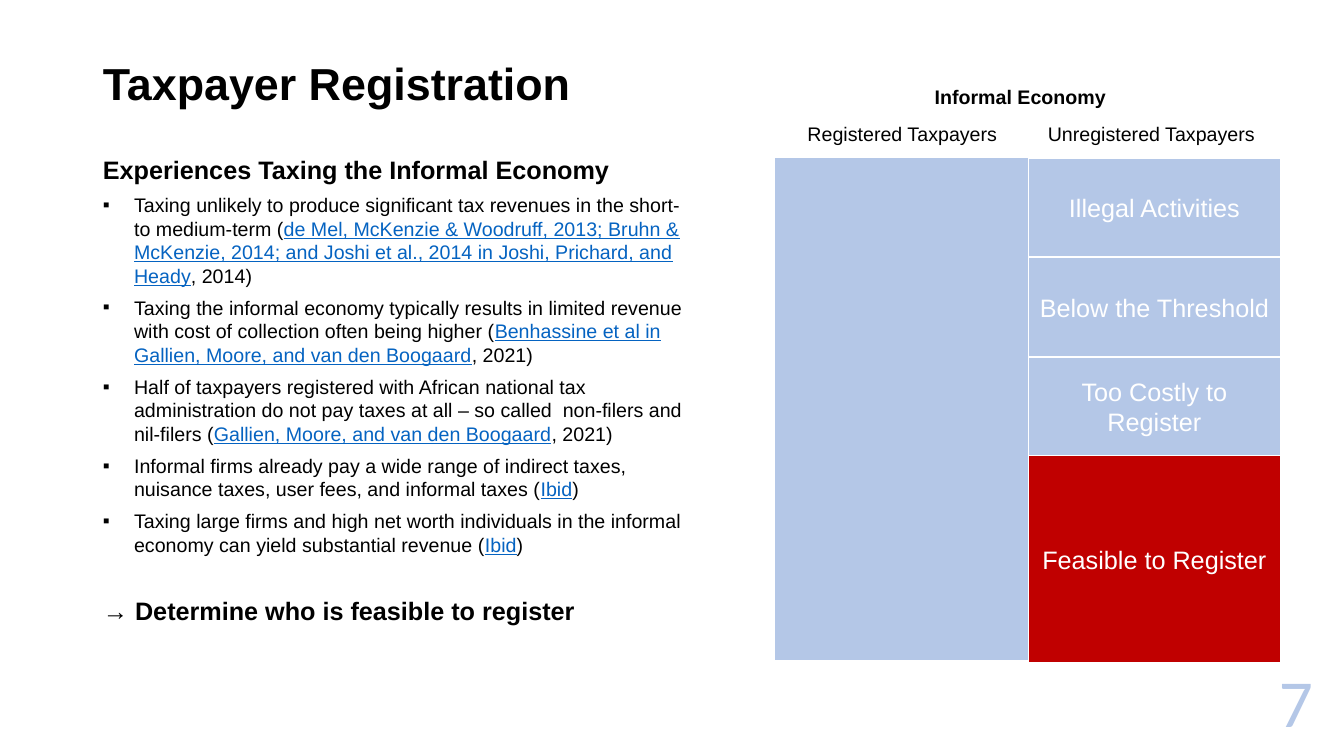
"""Build the Taxpayer Registration slide."""
from dataclasses import dataclass

from lxml import etree
from pptx import Presentation
from pptx.dml.color import RGBColor
from pptx.enum import shapes, text
from pptx.oxml import ns
from pptx.util import Inches, Pt


@dataclass(frozen=True)
class Theme:
    """Fonts, colours and type sizes."""
    font: str = "Arial"
    number_font: str = "Calibri"
    ink: str = "000000"
    white: str = "FFFFFF"
    link: str = "0563C1"
    blue: str = "B4C7E7"
    red: str = "C00000"
    title: int = 32
    heading: int = 18
    body: int = 14
    number: int = 48


THEME = Theme()
TITLE = "Taxpayer Registration"
HEADING = "Experiences Taxing the Informal Economy"
CONCLUSION = "→ Determine who is feasible to register"
BULLETS = [
    ("Taxing unlikely to produce significant tax revenues in the short- to medium-term (",
     "de Mel, McKenzie & Woodruff, 2013; Bruhn & McKenzie, 2014; and Joshi et al., 2014 "
     "in Joshi, Prichard, and Heady", ", 2014)"),
    ("Taxing the informal economy typically results in limited revenue with cost of "
     "collection often being higher (",
     "Benhassine et al in Gallien, Moore, and van den Boogaard", ", 2021)"),
    ("Half of taxpayers registered with African national tax administration do not pay "
     "taxes at all – so called  non-filers and nil-filers (",
     "Gallien, Moore, and van den Boogaard", ", 2021)"),
    ("Informal firms already pay a wide range of indirect taxes, nuisance taxes, user fees, "
     "and informal taxes (", "Ibid", ")"),
    ("Taxing large firms and high net worth individuals in the informal economy can yield "
     "substantial revenue (", "Ibid", ")"),
]
LABELS = [
    ("Informal Economy", 8.87, 0.79, True),
    ("Registered Taxpayers", 7.7, 1.16, False),
    ("Unregistered Taxpayers", 10.17, 1.16, False),
]
SEGMENTS = [
    ("Illegal Activities", 0.98, THEME.blue),
    ("Below the Threshold", 0.99, THEME.blue),
    ("Too Costly to Register", 0.98, THEME.blue),
    ("Feasible to Register", 2.05, THEME.red),
]
PAGE_NUMBER = "7"
COLUMN_LEFT, COLUMN_TOP, COLUMN_WIDTH = 10.2, 1.57, 2.5
REGISTERED = (7.68, 1.56, 2.52, 5)
INDENT = 0.31


def style(para, size, color=THEME.ink, bold=False, font=THEME.font, align=text.PP_ALIGN.LEFT):
    para.alignment = align
    para.font.name, para.font.size, para.font.bold = font, Pt(size), bold
    para.font.color.rgb = RGBColor.from_string(color)


def place(shape, left, top, width, height):
    shape.left, shape.top = Inches(left), Inches(top)
    shape.width, shape.height = Inches(width), Inches(height)


def set_bullet(para, symbol=None):
    properties = para._p.get_or_add_pPr()
    margin = Inches(INDENT) if symbol else 0
    properties.set("marL", str(margin))
    properties.set("indent", str(-margin))
    bullet = etree.Element(ns.qn("a:buChar" if symbol else "a:buNone"))
    if symbol:
        bullet.set("char", symbol)
    defaults = properties.find(ns.qn("a:defRPr"))
    defaults.addprevious(bullet)


def add_paragraph(frame, runs, size, bold=False, symbol=None, before=0):
    para = frame.paragraphs[0] if not frame.text else frame.add_paragraph()
    para.space_before, para.space_after = Pt(before), Pt(6)
    style(para, size, bold=bold)
    set_bullet(para, symbol)
    for words in runs:
        para.add_run().text = words
    return para


def add_label(page, words, left, top, width, height, size, **look):
    box = page.shapes.add_textbox(*map(Inches, (left, top, width, height)))
    box.text_frame.word_wrap = True
    para = box.text_frame.paragraphs[0]
    para.text = words
    style(para, size, **look)
    return box


def add_block(page, words, left, top, width, height, color):
    block = page.shapes.add_shape(shapes.MSO_SHAPE.FLOWCHART_PROCESS,
                                  *map(Inches, (left, top, width, height)))
    block.shadow.inherit = False
    block.fill.solid()
    block.fill.fore_color.rgb = RGBColor.from_string(color)
    block.line.color.rgb = RGBColor.from_string(THEME.white)
    block.line.width = Pt(1)
    if words:
        block.text_frame.vertical_anchor = text.MSO_ANCHOR.MIDDLE
        para = block.text_frame.paragraphs[0]
        para.text = words
        style(para, THEME.heading, THEME.white, align=text.PP_ALIGN.CENTER)


def main():
    deck = Presentation()
    deck.slide_width, deck.slide_height = Inches(13.33), Inches(7.5)
    page = deck.slides.add_slide(deck.slide_layouts[1])

    title, body = page.placeholders
    place(title, 0.92, 0.4, 6.03, 0.9)
    title.text_frame.text = TITLE
    title.text_frame.vertical_anchor = text.MSO_ANCHOR.MIDDLE
    heading = title.text_frame.paragraphs[0]
    heading.line_spacing = 0.9
    style(heading, THEME.title, bold=True)

    place(body, 0.92, 1.48, 6.03, 4.83)
    frame = body.text_frame
    frame.auto_size = text.MSO_AUTO_SIZE.NONE
    add_paragraph(frame, [HEADING], THEME.heading, bold=True)
    for runs in BULLETS:
        source = add_paragraph(frame, runs, THEME.body, symbol="▪").runs[1]
        source.font.color.rgb = RGBColor.from_string(THEME.link)
        source.font.underline = True
    add_paragraph(frame, [CONCLUSION], THEME.heading, bold=True, before=22)

    top = COLUMN_TOP
    for words, height, color in SEGMENTS:
        add_block(page, words, COLUMN_LEFT, top, COLUMN_WIDTH, height, color)
        top += height
    add_block(page, "", *REGISTERED, THEME.blue)

    for words, left, top, bold in LABELS:
        add_label(page, words, left, top, COLUMN_WIDTH, 0.34, THEME.body,
                  bold=bold, align=text.PP_ALIGN.CENTER)
    number = add_label(page, PAGE_NUMBER, 11.95, 6.56, 1.17, 0.79, THEME.number,
                       color=THEME.blue, font=THEME.number_font, align=text.PP_ALIGN.RIGHT)
    number.text_frame.vertical_anchor = text.MSO_ANCHOR.MIDDLE

    deck.save("out.pptx")


if __name__ == "__main__":
    main()
